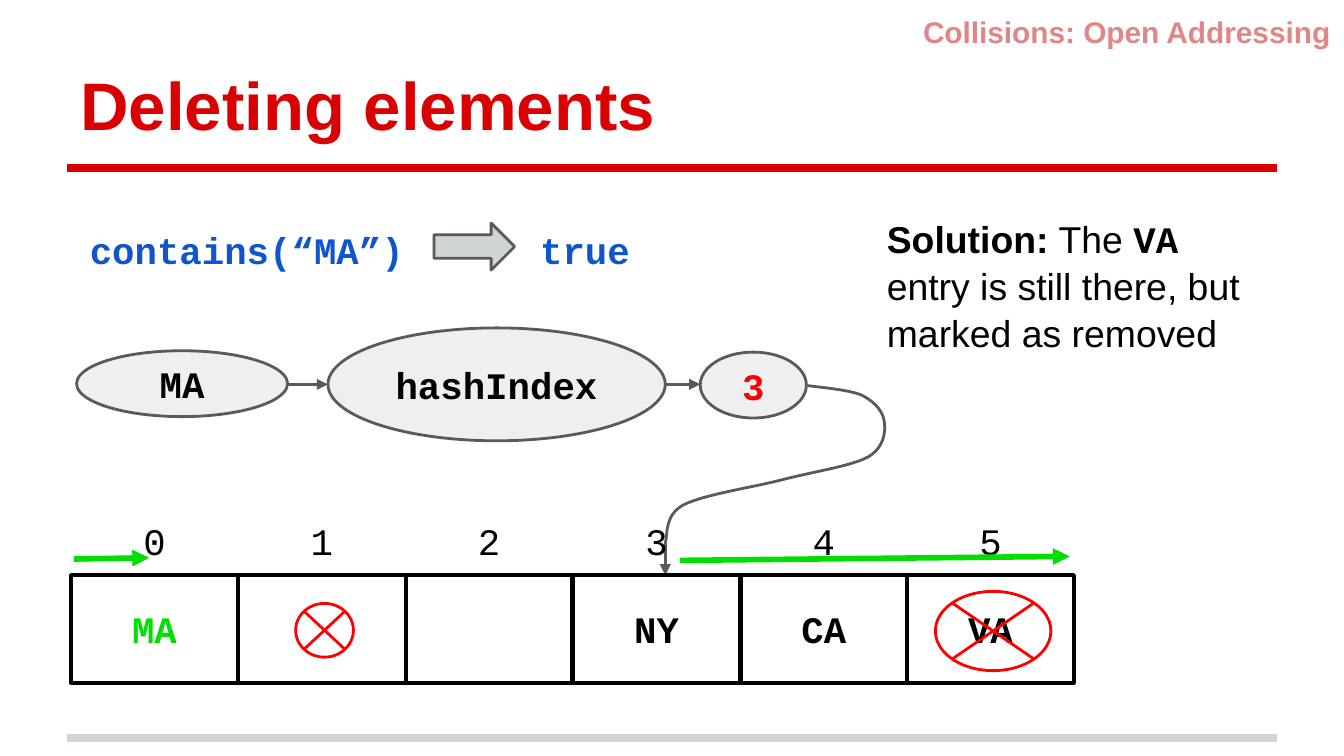
from dataclasses import dataclass

from lxml import etree
from pptx import Presentation
from pptx import util as u
from pptx.dml import color as c
from pptx.enum import shapes, text
from pptx.oxml import ns

SCALE = u.Inches(1) // 100
SANS, MONO = "Arial", "Courier New"
COLORS = {
    "red": "DA0002", "pink": "E08686", "silver": "CFD4D4", "gray": "5B595A",
    "pale": "EFEFEF", "black": "000000", "white": "FFFFFF", "green": "00DF00",
    "blue": "1155CC", "mark": "FF0000",
}
KINDS = shapes.MSO_SHAPE
LEFT, CENTER, RIGHT = text.PP_ALIGN.LEFT, text.PP_ALIGN.CENTER, text.PP_ALIGN.RIGHT
TOP, MIDDLE, BOTTOM = (text.MSO_ANCHOR.TOP, text.MSO_ANCHOR.MIDDLE,
                       text.MSO_ANCHOR.BOTTOM)


@dataclass
class Box:
    left: int
    top: int
    width: int
    height: int

    def emu(self) -> list[int]:
        return [px(n) for n in (self.left, self.top, self.width, self.height)]


@dataclass
class Node:
    box: Box
    label: str = ""
    kind: int = KINDS.OVAL
    fill: str | None = "pale"
    line: str = "gray"
    weight: float = 1.5
    ink: str = "black"


@dataclass
class Line:
    start: tuple[int, int]
    end: tuple[int, int]
    color: str = "gray"
    weight: float = 1.5
    arrow: bool = True


@dataclass
class Label:
    box: Box
    words: str
    ink: str = "blue"
    size: int = 20
    font: str = MONO
    bold: bool = True
    align: int = LEFT
    anchor: int = TOP


def px(length: float) -> int:
    return round(length * SCALE)


def rgb(name: str) -> c.RGBColor:
    return c.RGBColor.from_string(COLORS[name])


def write(para, words: str, *, size: int = 20, font: str = MONO,
          ink: str = "black", bold: bool = True) -> None:
    span = para.add_run()
    span.text = words
    span.font.size = u.Pt(size)
    span.font.name = font
    span.font.bold = bold
    span.font.color.rgb = rgb(ink)


def prepare(shape, align: int, anchor: int):
    frame = shape.text_frame
    frame.word_wrap = True
    frame.vertical_anchor = anchor
    frame.margin_left = frame.margin_right = px(10)
    frame.margin_top = frame.margin_bottom = px(10)
    para = frame.paragraphs[0]
    para.alignment = align
    return para


def draw_label(page, label: Label) -> None:
    para = prepare(page.shapes.add_textbox(*label.box.emu()), label.align, label.anchor)
    write(para, label.words, size=label.size, font=label.font, ink=label.ink,
          bold=label.bold)


def draw_node(page, node: Node) -> None:
    shape = page.shapes.add_shape(node.kind, *node.box.emu())
    shape.shadow.inherit = False
    if node.fill:
        shape.fill.solid()
        shape.fill.fore_color.rgb = rgb(node.fill)
    else:
        shape.fill.background()
    shape.line.color.rgb = rgb(node.line)
    shape.line.width = u.Pt(node.weight)
    if node.label:
        write(prepare(shape, CENTER, MIDDLE), node.label, ink=node.ink)


def draw_line(page, line: Line) -> None:
    ends = [px(n) for n in (*line.start, *line.end)]
    connector = page.shapes.add_connector(shapes.MSO_CONNECTOR.STRAIGHT, *ends)
    connector.line.color.rgb = rgb(line.color)
    connector.line.width = u.Pt(line.weight)
    if line.arrow:
        etree.SubElement(connector.line._get_or_add_ln(), ns.qn("a:tailEnd"),
                         type="triangle")
    etree.SubElement(connector._element.spPr, ns.qn("a:effectLst"))


def draw_curve(page, start: tuple[int, int], segments: list, steps: int = 12) -> None:
    points, origin = [], start
    for first, second, end in segments:
        for step in range(1, steps + 1):
            t = step / steps
            weights = ((1 - t) ** 3, 3 * t * (1 - t) ** 2, 3 * t * t * (1 - t), t ** 3)
            corners = (origin, first, second, end)
            points.append(tuple(px(sum(w * p[axis] for w, p in zip(weights, corners)))
                                for axis in (0, 1)))
        origin = end
    builder = page.shapes.build_freeform(px(start[0]), px(start[1]))
    builder.add_line_segments(points, close=False)
    curve = builder.convert_to_shape()
    curve.shadow.inherit = False
    curve.fill.background()
    curve.line.color.rgb = rgb("gray")
    curve.line.width = u.Pt(1.5)


def draw_solution(page) -> None:
    para = prepare(page.shapes.add_textbox(*Box(650, 149, 301, 131).emu()), LEFT, TOP)
    para.line_spacing = 1.05
    write(para, "Solution:", font=SANS)
    write(para, " The ", font=SANS, bold=False)
    write(para, "VA")
    write(para, " entry is still there, but marked as removed", font=SANS, bold=False)


def draw_array(page) -> None:
    entries = ["MA", "", "", "NY", "CA", "VA"]
    left, pitch = 53, 124.4
    for index, entry in enumerate(entries):
        x = round(left + index * pitch)
        width = round(left + (index + 1) * pitch) - x
        draw_node(page, Node(Box(x, 428, width, 80), entry, KINDS.RECTANGLE, None,
                             "black", 2.25, "black" if index else "green"))
        draw_label(page, Label(Box(x, 390, width, 25), str(index), "black",
                               bold=False, align=CENTER, anchor=MIDDLE))


def main() -> None:
    deck = Presentation()
    deck.slide_width, deck.slide_height = px(1000), px(562.5)
    page = deck.slides.add_slide(deck.slide_layouts[6])

    for y, color in ((549, "silver"), (125, "red")):
        draw_line(page, Line((50, y), (950, y), color, 4, False))
    draw_label(page, Label(Box(50, 23, 938, 94), "Deleting elements", "red", 36,
                           SANS, anchor=BOTTOM))
    draw_solution(page)

    for node in (
        Node(Box(244, 244, 251, 84), "hashIndex"),
        Node(Box(57, 261, 157, 49), "MA"),
        Node(Box(521, 262, 79, 49), "3", ink="mark"),
    ):
        draw_node(page, node)
    for line in (
        Line((215, 286), (244, 286)),
        Line((495, 286), (521, 286)),
        Line((495, 404), (495, 428)),
    ):
        draw_line(page, line)
    draw_curve(page, (601, 287), [
        ((608, 288), (632, 290), (641, 294)),
        ((651, 299), (657, 306), (658, 314)),
        ((659, 321), (658, 333), (646, 340)),
        ((633, 347), (605, 351), (582, 357)),
        ((559, 363), (523, 368), (508, 376)),
        ((494, 384), (497, 399), (495, 404)),
    ])

    draw_array(page)
    draw_line(page, Line((506, 417), (796, 414), "green", 3))
    draw_line(page, Line((55, 416), (111, 415), "green", 3))
    junction = KINDS.FLOWCHART_SUMMING_JUNCTION
    draw_node(page, Node(Box(220, 449, 43, 40), "", junction, "white", "mark"))
    draw_node(page, Node(Box(696, 440, 86, 59), "", junction, None, "mark"))

    draw_label(page, Label(Box(57, 159, 347, 49), "contains(“MA”)"))
    draw_label(page, Label(Box(653, 0, 347, 40), "Collisions: Open Addressing",
                           "pink", 16, SANS, align=RIGHT))
    draw_node(page, Node(Box(323, 166, 60, 35), "", KINDS.RIGHT_ARROW, "silver"))
    draw_label(page, Label(Box(392, 159, 135, 49), "true"))
    deck.save("out.pptx")


if __name__ == "__main__":
    main()
